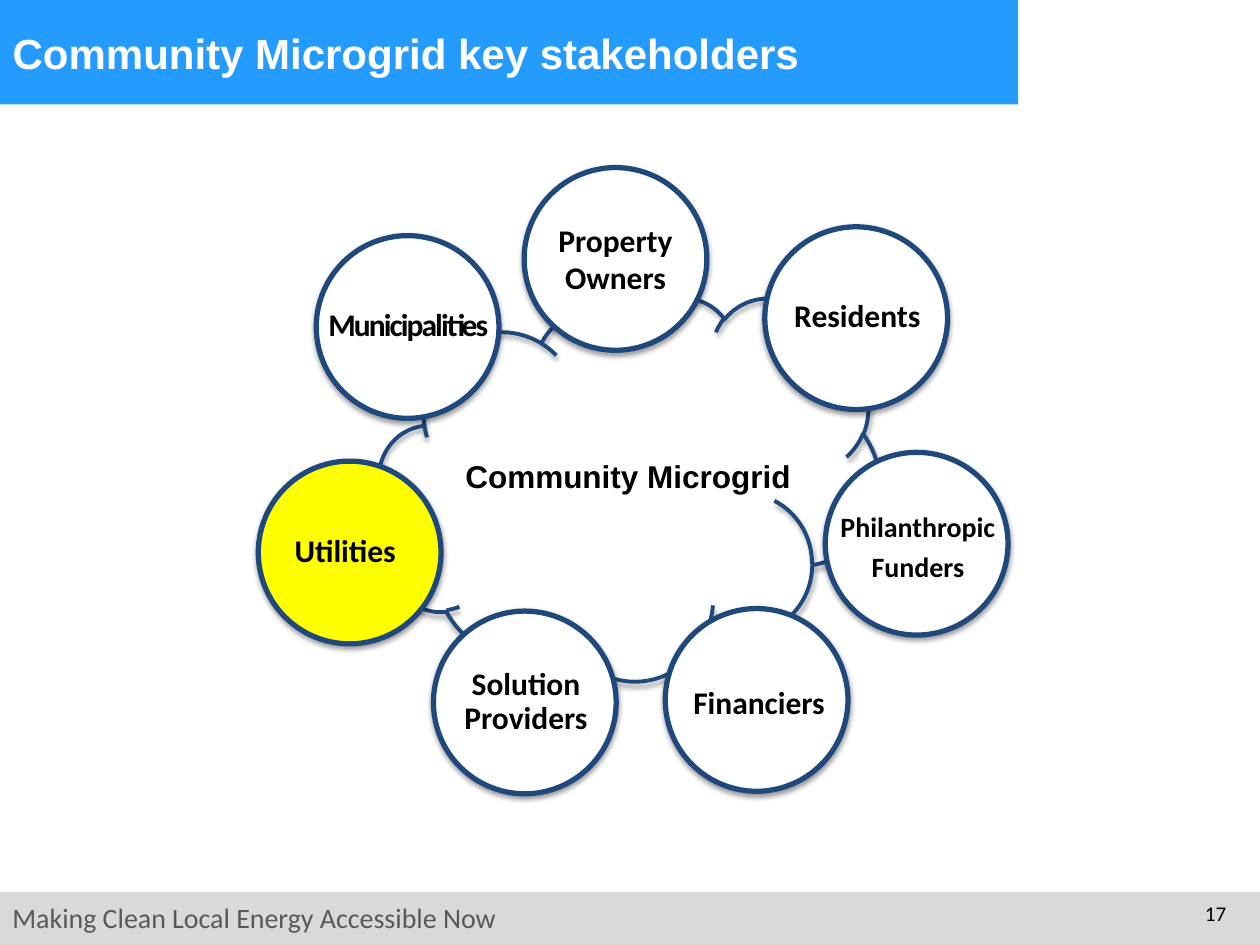
from lxml import etree
from pptx import Presentation
from pptx.dml.color import RGBColor
from pptx.enum.shapes import MSO_SHAPE
from pptx.enum.text import MSO_ANCHOR, PP_ALIGN
from pptx.oxml.ns import qn
from pptx.util import Inches, Pt

RECTANGLE, OVAL, CLOUD = MSO_SHAPE.RECTANGLE, MSO_SHAPE.OVAL, MSO_SHAPE.CLOUD
TOP, MIDDLE = MSO_ANCHOR.TOP, MSO_ANCHOR.MIDDLE
LEFT, CENTER, RIGHT = PP_ALIGN.LEFT, PP_ALIGN.CENTER, PP_ALIGN.RIGHT

BLACK = RGBColor(0x00, 0x00, 0x00)
WHITE = RGBColor(0xFF, 0xFF, 0xFF)
NAVY = RGBColor(0x1F, 0x49, 0x7D)
BLUE = RGBColor(0x24, 0x9C, 0xFF)
YELLOW = RGBColor(0xFF, 0xFF, 0x00)
LIGHT_GRAY = RGBColor(0xD9, 0xD9, 0xD9)
DARK_GRAY = RGBColor(0x59, 0x59, 0x59)

COLUMNS, ROWS = 100, 75
CIRCLE_SIZE = 14.5
LABEL_HEIGHT = 10.2

# Lines, circle corner, label corner, label width, further settings
STAKEHOLDERS = [
    (["Financiers"], (52.8, 48.3), (54.4, 50.8), 11.7, {}),
    (["Solution Providers"], (34.4, 48.5), (34.7, 50.6), 14.1, {}),
    (["Utilities"], (20.5, 36.6), (21.2, 38.7), 12.4, {"fill": YELLOW}),
    (["Property Owners"], (41.6, 13.3), (41.6, 15.4), 14.5, {"loose": True}),
    (["Municipalities"], (25.1, 18.7), (24.7, 20.8), 15.4, {"tracking": -1.1}),
    (["Residents"], (60.7, 18), (62.2, 20.1), 11.7, {}),
    (["Philanthropic", "Funders"], (65.5, 35.9), (65.9, 38.4), 13.9, {"size": 16}),
]


class SlideBuilder:
    """Draws on one slide; every position is in grid columns and rows."""

    def __init__(self, deck):
        self.column = deck.slide_width / COLUMNS
        self.row = deck.slide_height / ROWS
        self.slide = deck.slides.add_slide(deck.slide_layouts[5])

    def place(self, left, top, width, height):
        return (round(left * self.column), round(top * self.row),
                round(width * self.column), round(height * self.row))

    def shape(self, kind, area, fill=None, line_width=0, shadow=None):
        shape = self.slide.shapes.add_shape(kind, *self.place(*area))
        shape.shadow.inherit = False
        if fill is None:
            shape.fill.background()
        else:
            shape.fill.solid()
            shape.fill.fore_color.rgb = fill
        if line_width:
            shape.line.color.rgb = NAVY
            shape.line.width = Pt(line_width)
        else:
            shape.line.fill.background()
        if shadow:
            self.drop_shadow(shape, *shadow)

    def drop_shadow(self, shape, opacity, blur, distance):
        effects = shape._element.spPr.find(qn("a:effectLst"))
        outer = etree.SubElement(
            effects, qn("a:outerShdw"), blurRad=str(Pt(blur)), dist=str(Pt(distance)),
            dir="5400000", rotWithShape="0")
        color = etree.SubElement(outer, qn("a:srgbClr"), val=str(BLACK))
        etree.SubElement(color, qn("a:alpha"), val=str(opacity * 1000))

    def set_text(self, frame, lines, size, font="Calibri", color=BLACK, bold=False,
                 align=LEFT, anchor=TOP, wrap=True):
        frame.word_wrap = wrap
        frame.vertical_anchor = anchor
        frame.text = "\n".join(lines)
        for para in frame.paragraphs:
            para.alignment = align
            para.font.name = font
            para.font.size = Pt(size)
            para.font.bold = bold
            para.font.color.rgb = color

    def text(self, area, lines, size, **style):
        box = self.slide.shapes.add_textbox(*self.place(*area))
        self.set_text(box.text_frame, lines, size, **style)
        return box.text_frame

    def title(self, area, words):
        title = self.slide.shapes.title
        title.left, title.top, title.width, title.height = self.place(*area)
        self.set_text(title.text_frame, [words], 24, font="Arial", color=WHITE,
                      bold=True, anchor=MIDDLE)
        self.slide.shapes._spTree.append(title._element)  # in front of the bar

    def stakeholder(self, lines, circle, label, width, fill=WHITE, size=18,
                    loose=False, tracking=0):
        """Circle with its label; a loose label keeps plain line spacing."""
        self.shape(OVAL, (*circle, CIRCLE_SIZE, CIRCLE_SIZE), fill, 3, (38, 3.1, 1.6))
        frame = self.text((*label, width, LABEL_HEIGHT), lines, size, bold=True,
                          align=CENTER, anchor=MIDDLE)
        frame.margin_left = frame.margin_right = Inches(0.01)
        frame.margin_top = frame.margin_bottom = Inches(0.01)
        for para in frame.paragraphs:
            if not loose:
                para.line_spacing = 0.9
                para.space_after = Pt(0.35 * size)
            if tracking:
                for span in para.runs:
                    span.font._element.set("spc", str(round(tracking * 100)))


def main():
    deck = Presentation()
    deck.slide_width, deck.slide_height = Inches(10), Inches(7.5)
    page = SlideBuilder(deck)

    page.shape(RECTANGLE, (0, 70.8, 100, 4.2), LIGHT_GRAY)
    page.text((0, 71, 51.7, 3.7), ["Making Clean Local Energy Accessible Now"], 16,
              color=DARK_GRAY)
    page.shape(RECTANGLE, (0, 0, 80.8, 8.3), BLUE)
    page.text((93.3, 71, 5, 4), ["17"], 12, align=RIGHT)
    page.title((0, 0, 80, 8.3), "Community Microgrid key stakeholders")

    page.shape(CLOUD, (30.1, 23.6, 39.7, 30.4), line_width=2.25, shadow=(35, 3.1, 1.8))
    page.text((35.8, 35.8, 28.1, 4), ["Community Microgrid"], 18, font="Arial",
              bold=True, align=CENTER, wrap=False)
    for lines, circle, label, width, settings in STAKEHOLDERS:
        page.stakeholder(lines, circle, label, width, **settings)

    deck.save("out.pptx")


if __name__ == "__main__":
    main()
